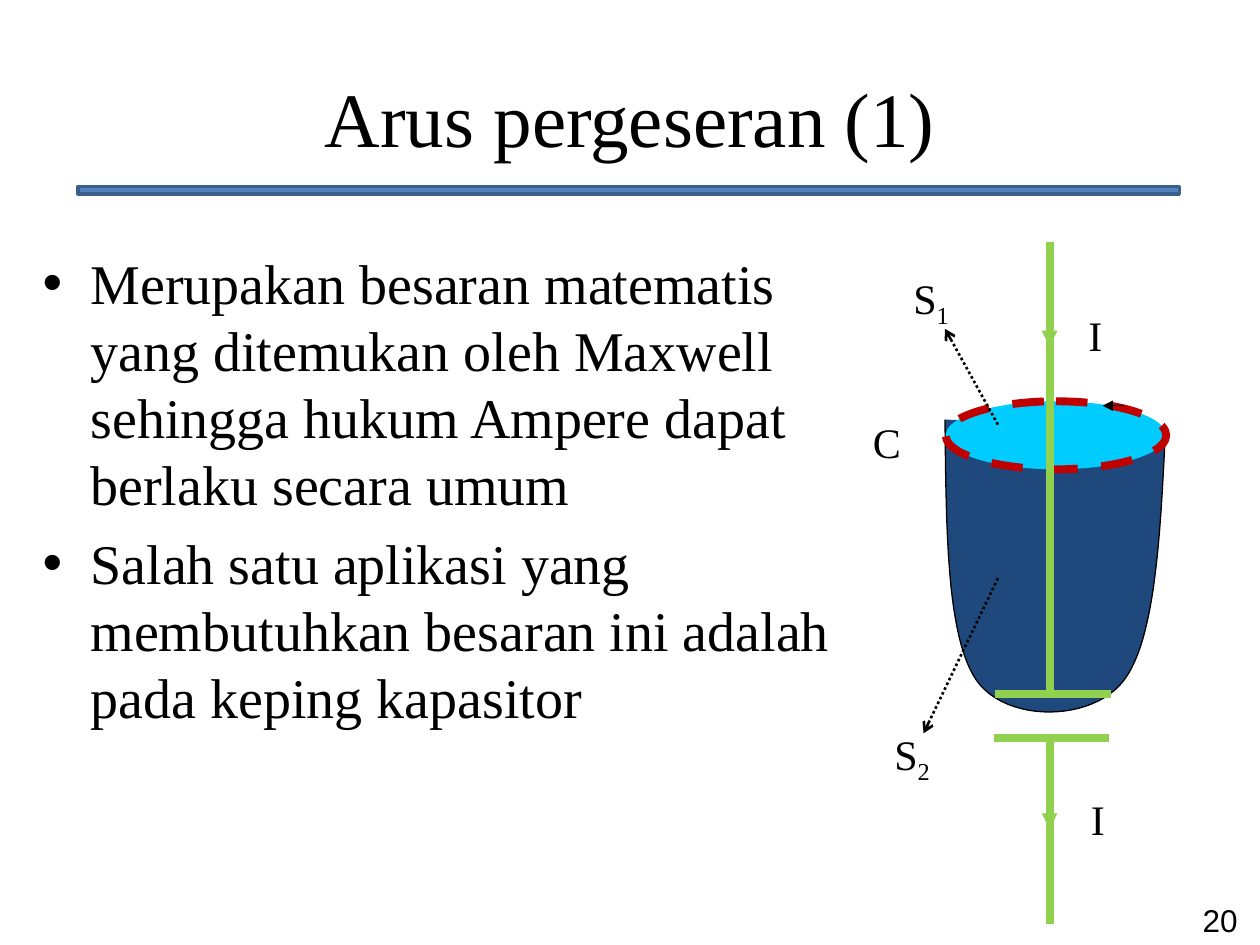
from lxml import etree
from pptx import Presentation
from pptx import util as u
from pptx.dml.color import RGBColor
from pptx.enum import dml, shapes, text
from pptx.oxml.ns import qn

SERIF = "Times New Roman"
BLACK = "000000"
GREEN = "92D050"


def color(hex_value):
    """Turn a hex string into a colour."""
    return RGBColor.from_string(hex_value)


def style(shape, fill, line, weight, dash=None):
    """Set the fill and outline of a shape and drop its shadow."""
    shape.shadow.inherit = False
    shape.fill.solid()
    shape.fill.fore_color.rgb = color(fill)
    shape.line.color.rgb = color(line)
    shape.line.width = u.Pt(weight)
    if dash:
        shape.line.dash_style = dash


def add_run(paragraph, words, size, font=SERIF, baseline=None):
    """Add one formatted run to a paragraph."""
    run = paragraph.add_run()
    run.text = words
    run.font.size = u.Pt(size)
    run.font.name = font
    run.font.color.rgb = color(BLACK)
    if baseline:
        run._r.get_or_add_rPr().set("baseline", str(baseline))


def add_text(slide, box, words, size=24, font=SERIF, align=None, wrap=True, sub=None):
    """Add a text box, with an optional subscript after the words."""
    frame = slide.shapes.add_textbox(*map(u.Inches, box)).text_frame
    frame.word_wrap = wrap
    paragraph = frame.paragraphs[0]
    paragraph.alignment = align
    add_run(paragraph, words, size, font)
    if sub:
        add_run(paragraph, sub, size, font, baseline=-25000)
    return frame


def add_line(slide, start, end, line=GREEN, weight=4.5, dash=None, head=None):
    """Add a straight line with an optional arrowhead at its end."""
    connector = slide.shapes.add_connector(
        shapes.MSO_CONNECTOR.STRAIGHT, *map(u.Inches, (*start, *end)))
    connector.line.color.rgb = color(line)
    connector.line.width = u.Pt(weight)
    if dash:
        connector.line.dash_style = dash
    if head:
        etree.SubElement(connector.line._get_or_add_ln(), qn("a:tailEnd"), type=head)
    etree.SubElement(connector._element.spPr, qn("a:effectLst"))


def add_heading(slide, box, words):
    """Place the title and the bar below it."""
    left, top, width, height = box
    title = slide.shapes.title
    title.left, title.top, title.width, title.height = map(u.Inches, box)
    title.text_frame.vertical_anchor = text.MSO_ANCHOR.MIDDLE
    paragraph = title.text_frame.paragraphs[0]
    paragraph.alignment = text.PP_ALIGN.CENTER
    add_run(paragraph, words, 44)
    bar = slide.shapes.add_shape(
        shapes.MSO_SHAPE.RECTANGLE,
        *map(u.Inches, (left + 0.12, top + 1.18, width - 0.26, 0.06)))
    style(bar, "4F81BD", "3A5F8C", 2)


def add_bullets(slide, box, points):
    """Place the bulleted explanation."""
    frame = add_text(slide, box, points[0], 32)
    for point in points[1:]:
        add_run(frame.add_paragraph(), point, 32)
    for paragraph in frame.paragraphs:
        paragraph.space_before = u.Pt(6.4)
        properties = paragraph._p.get_or_add_pPr()
        properties.set("marL", str(u.Inches(0.38)))
        properties.set("indent", str(u.Inches(-0.38)))
        etree.SubElement(properties, qn("a:buFont"), typeface="Arial")
        etree.SubElement(properties, qn("a:buChar"), char="•")


def curve_points(start, curves, steps=24):
    """Sample a chain of cubic curves, each given as two controls and an end."""
    points = [start]
    for curve in curves:
        corners = (points[-1], *curve)
        for step in range(1, steps + 1):
            t = step / steps
            weights = ((1 - t) ** 3, 3 * t * (1 - t) ** 2, 3 * t * t * (1 - t), t ** 3)
            points.append(tuple(
                sum(w * corner[axis] for w, corner in zip(weights, corners))
                for axis in (0, 1)))
    return points


def add_capacitor(slide, left, top):
    """Draw the capacitor, its two surfaces and the current through it."""
    def at(x, y):
        return left + x, top + y

    rim = curve_points((2.45, 1.51), [
        ((2.41, 2.34), (2.37, 3.17), (2.12, 3.5)),
        ((1.87, 3.83), (1.19, 3.84), (0.95, 3.5)),
        ((0.71, 3.15), (0.71, 2.29), (0.7, 1.43)),
    ])
    outline = [tuple(map(u.Inches, at(*point))) for point in rim]
    builder = slide.shapes.build_freeform(*outline[0])
    builder.add_line_segments(outline[1:], close=False)
    style(builder.convert_to_shape(), "1F497D", BLACK, 0.75)

    wire = 1.53
    add_line(slide, at(wire, 3.98), at(wire, 5.43))
    add_line(slide, at(2.02, 3.61), at(1.1, 3.61))
    add_line(slide, at(2, 3.96), at(1.09, 3.96))
    for y in (0.55, 4.38):
        add_line(slide, at(wire, y), at(wire, y + 0.3), weight=3, head="triangle")

    surface = slide.shapes.add_shape(
        shapes.MSO_SHAPE.OVAL, *map(u.Inches, (*at(1.31, 0.68), 0.54, 1.75)))
    surface.rotation = 90
    style(surface, "00CCFF", "C00000", 4.5, dml.MSO_LINE.DASH)
    add_line(slide, at(wire, 0.02), at(wire, 3.61))
    add_line(slide, at(2.12, 1.32), at(1.95, 1.32), BLACK, 0.75, head="triangle")

    for start, end in (((1.12, 1.47), (0.7, 0.71)), ((1.12, 2.69), (0.53, 3.92))):
        add_line(slide, at(*start), at(*end), BLACK, 1.5,
                 dml.MSO_LINE.ROUND_DOT, "arrow")
    for x, y, width, name, sub in (
        (1.74, 0.51, 0.31, "I", None),
        (0.03, 1.36, 0.43, "C", None),
        (0.35, 0.21, 0.5, "S", "1"),
        (0.2, 3.83, 0.5, "S", "2"),
        (1.76, 4.35, 0.31, "I", None),
    ):
        add_text(slide, (*at(x, y), width, 0.5), name, wrap=False, sub=sub)


def main():
    """Build the slide and save it."""
    deck = Presentation()
    deck.slide_width, deck.slide_height = u.Inches(10), u.Inches(7.5)
    slide = deck.slides.add_slide(deck.slide_layouts[5])
    add_heading(slide, (0.5, 0.3, 9, 1.25), "Arus pergeseran (1)")
    add_text(slide, (8.67, 7.1, 1.25, 0.4), "20", 18, "Arial", text.PP_ALIGN.RIGHT)
    add_bullets(slide, (0.24, 1.92, 6.51, 5.34), [
        "Merupakan besaran matematis yang ditemukan oleh Maxwell "
        "sehingga hukum Ampere dapat berlaku secara umum",
        "Salah satu aplikasi yang membutuhkan besaran ini adalah "
        "pada keping kapasitor",
    ])
    add_capacitor(slide, 6.8, 1.9)
    deck.save("out.pptx")


if __name__ == "__main__":
    main()
